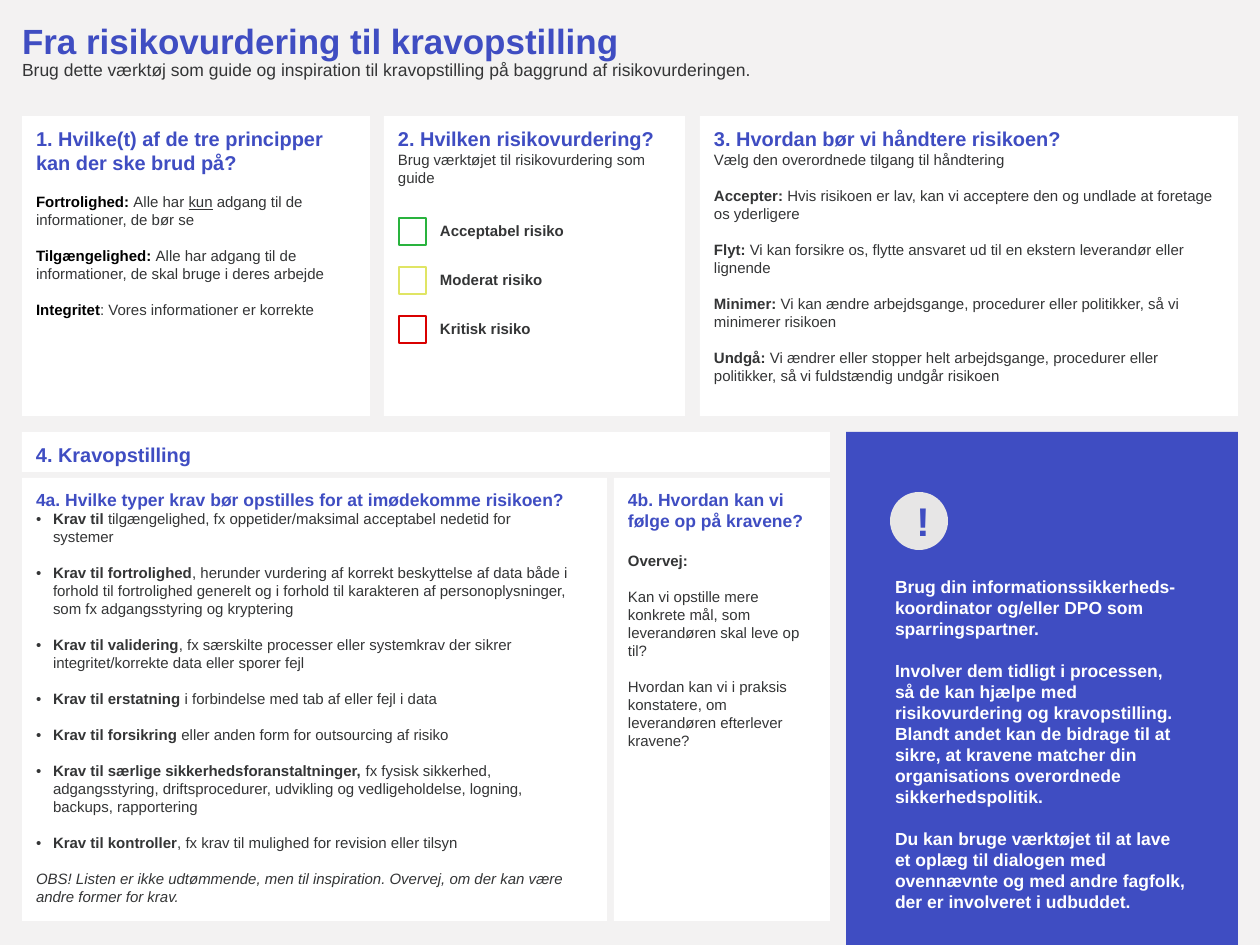
from dataclasses import dataclass
from typing import NamedTuple

from lxml import etree
from pptx import Presentation
from pptx.dml.color import RGBColor
from pptx.enum.shapes import MSO_SHAPE
from pptx.enum.text import MSO_ANCHOR, MSO_AUTO_SIZE, PP_ALIGN
from pptx.oxml.ns import qn
from pptx.util import Emu, Pt

RECT, OVAL = MSO_SHAPE.RECTANGLE, MSO_SHAPE.OVAL
TOP, MIDDLE = MSO_ANCHOR.TOP, MSO_ANCHOR.MIDDLE
LEFT, CENTER = PP_ALIGN.LEFT, PP_ALIGN.CENTER
NO_FIT = MSO_AUTO_SIZE.NONE

EMU_PER_PX = 10160
FONT = "Arial"
BLUE, TEXT, BLACK, WHITE = "3F4DC2", "343536", "000000", "FFFFFF"
PAGE, PALE = "F3F2F2", "E7E6E6"
GAP, BIG_GAP = 18, 21  # one empty line of 12 pt and of 14 pt text
HANG = 17


class Box(NamedTuple):
    x: int
    y: int
    w: int
    h: int


class Span(NamedTuple):
    text: str
    bold: bool = False
    color: str = TEXT
    italic: bool = False
    underline: bool = False


@dataclass
class Para:
    spans: list[Span]
    size: int = 12
    before: int = 0
    bullet: bool = False
    align: PP_ALIGN = LEFT
    spacing: float = 1.0


@dataclass
class Card:
    box: Box
    paras: list[Para]
    right: int = 11


class Level(NamedTuple):
    label: str
    color: str


def px(n: int) -> Emu:
    return Emu(n * EMU_PER_PX)


def rgb(color: str) -> RGBColor:
    return RGBColor.from_string(color)


def heading(text: str, size: int = 16) -> Para:
    return Para([Span(text, True, BLUE)], size)


def plain(text: str, before: int = GAP) -> Para:
    return Para([Span(text)], before=before)


def term(name: str, text: str, color: str = TEXT, before: int = GAP, bullet: bool = False) -> Para:
    """A bold lead followed by its explanation."""
    return Para([Span(name, True, color), Span(text)], before=before, bullet=bullet)


def add_run(p, text: str, *, size: int, color: str, bold=False, italic=False, underline=False) -> None:
    r = p.add_run()
    r.text = text
    f = r.font
    f.name, f.size, f.bold, f.italic, f.underline = FONT, Pt(size), bold, italic, underline
    f.color.rgb = rgb(color)


def set_bullet(p, on: bool) -> None:
    pPr = p._p.get_or_add_pPr()
    hang = px(HANG) if on else 0
    pPr.set("marL", str(hang))
    pPr.set("indent", str(-hang))
    if on:
        etree.SubElement(pPr, qn("a:buFont")).set("typeface", FONT)
        etree.SubElement(pPr, qn("a:buChar")).set("char", "•")
    else:
        etree.SubElement(pPr, qn("a:buNone"))


def write(s, paras: list[Para], insets=(0, 0, 0, 0), anchor=TOP) -> None:
    tf = s.text_frame
    tf.word_wrap, tf.auto_size, tf.vertical_anchor = True, NO_FIT, anchor
    tf.margin_left, tf.margin_top, tf.margin_right, tf.margin_bottom = map(px, insets)
    for i, para in enumerate(paras):
        p = tf.add_paragraph() if i else tf.paragraphs[0]
        set_bullet(p, para.bullet)
        p.alignment, p.line_spacing = para.align, para.spacing
        p.space_before, p.space_after = px(para.before), Pt(0)
        for span in para.spans:
            add_run(p, span.text, size=para.size, color=span.color, bold=span.bold,
                    italic=span.italic, underline=span.underline)


def place(s, box: Box) -> None:
    s.left, s.top, s.width, s.height = map(px, box)


def add_shape(slide, kind, box: Box, fill: str, line: str | None = None):
    s = slide.shapes.add_shape(kind, *map(px, box))
    s.shadow.inherit = False
    s.fill.solid()
    s.fill.fore_color.rgb = rgb(fill)
    if line:
        s.line.color.rgb = rgb(line)
        s.line.width = Pt(2.25)
    else:
        s.line.fill.background()
    return s


def add_text(slide, box: Box, paras: list[Para]) -> None:
    write(slide.shapes.add_textbox(*map(px, box)), paras)


def write_card(s, card: Card) -> None:
    write(s, card.paras, (14, 11, card.right, 18))


TITLE = [
    Para([Span("Fra risikovurdering til kravopstilling", True, BLUE)], 28, spacing=0.9),
    Para([Span("Brug dette værktøj som guide og inspiration til kravopstilling på baggrund af "
               "risikovurderingen.")], 14, spacing=0.9),
]

CARDS = [
    Card(Box(22, 116, 348, 300), [
        heading("1. Hvilke(t) af de tre principper kan der ske brud på?"),
        Para([Span("Fortrolighed: ", True, BLACK), Span("Alle har "), Span("kun", underline=True),
              Span(" adgang til de informationer, de bør se")], before=GAP),
        term("Tilgængelighed: ", "Alle har adgang til de informationer, de skal bruge i deres arbejde", BLACK),
        term("Integritet", ": Vores informationer er korrekte", BLACK),
    ]),
    Card(Box(384, 116, 301, 300), [
        heading("2. Hvilken risikovurdering?"),
        plain("Brug værktøjet til risikovurdering som guide", 0),
    ]),
    Card(Box(700, 116, 538, 300), [
        heading("3. Hvordan bør vi håndtere risikoen?"),
        plain("Vælg den overordnede tilgang til håndtering", 0),
        term("Accepter: ", "Hvis risikoen er lav, kan vi acceptere den og undlade at foretage os yderligere"),
        term("Flyt: ", "Vi kan forsikre os, flytte ansvaret ud til en ekstern leverandør eller lignende"),
        term("Minimer: ", "Vi kan ændre arbejdsgange, procedurer eller politikker, så vi minimerer risikoen"),
        term("Undgå: ", "Vi ændrer eller stopper helt arbejdsgange, procedurer eller politikker, "
                        "så vi fuldstændig undgår risikoen"),
    ], right=22),
    Card(Box(22, 432, 808, 40), [heading("4. Kravopstilling")], right=35),
    Card(Box(614, 478, 216, 443), [
        heading("4b. Hvordan kan vi følge op på kravene?", 14),
        Para([Span("Overvej:", True)], before=BIG_GAP),
        plain("Kan vi opstille mere konkrete mål, som leverandøren skal leve op til?"),
        plain("Hvordan kan vi i praksis konstatere, om leverandøren efterlever kravene?"),
    ]),
]

DEMANDS = [
    ("Krav til ", "tilgængelighed, fx oppetider/maksimal acceptabel nedetid for systemer"),
    ("Krav til fortrolighed", ", herunder vurdering af korrekt beskyttelse af data både i forhold til "
     "fortrolighed generelt og i forhold til karakteren af personoplysninger, som fx adgangsstyring "
     "og kryptering"),
    ("Krav til validering", ", fx særskilte processer eller systemkrav der sikrer integritet/korrekte "
     "data eller sporer fejl"),
    ("Krav til erstatning ", "i forbindelse med tab af eller fejl i data"),
    ("Krav til forsikring ", "eller anden form for outsourcing af risiko"),
    ("Krav til særlige sikkerhedsforanstaltninger, ", "fx fysisk sikkerhed, adgangsstyring, "
     "driftsprocedurer, udvikling og vedligeholdelse, logning, backups, rapportering"),
    ("Krav til kontroller", ", fx krav til mulighed for revision eller tilsyn"),
]
DEMAND_CARD = Card(Box(22, 478, 585, 443), [
    heading("4a. Hvilke typer krav bør opstilles for at imødekomme risikoen?", 14),
    *(term(name, text, before=GAP if i else 0, bullet=True) for i, (name, text) in enumerate(DEMANDS)),
    Para([Span("OBS! Listen er ikke udtømmende, men til inspiration. Overvej, om der kan være "
               "andre former for krav.", italic=True)], before=GAP),
], right=35)

LEVELS = [Level("Acceptabel risiko", "29B33E"), Level("Moderat risiko", "E0E564"), Level("Kritisk risiko", "D90000")]

ADVICE = [
    "Brug din informationssikkerheds-koordinator og/eller DPO som sparringspartner.",
    "Involver dem tidligt i processen, så de kan hjælpe med risikovurdering og kravopstilling. "
    "Blandt andet kan de bidrage til at sikre, at kravene matcher din organisations overordnede "
    "sikkerhedspolitik.",
    "Du kan bruge værktøjet til at lave et oplæg til dialogen med ovennævnte og med andre fagfolk, "
    "der er involveret i udbuddet.",
]


def main() -> None:
    prs = Presentation()
    prs.slide_width, prs.slide_height = px(1260), px(945)
    slide = prs.slides.add_slide(prs.slide_layouts[1])
    slide.background.fill.solid()
    slide.background.fill.fore_color.rgb = rgb(PAGE)

    # Title and subtitle
    place(slide.shapes.title, Box(22, 24, 751, 72))
    write(slide.shapes.title, TITLE)

    # White cards, with the list of demands in the body placeholder
    for card in CARDS:
        write_card(add_shape(slide, RECT, card.box, WHITE), card)
    body = slide.placeholders[1]
    place(body, DEMAND_CARD.box)
    body.fill.solid()
    body.fill.fore_color.rgb = rgb(WHITE)
    write_card(body, DEMAND_CARD)

    # Risk levels with check boxes
    for i, level in enumerate(LEVELS):
        y = 218 + 49 * i
        add_shape(slide, RECT, Box(399, y, 27, 27), WHITE, level.color)
        add_text(slide, Box(440, y + 4, 153, 18), [Para([Span(level.label, True)])])

    # Advice panel
    add_shape(slide, RECT, Box(846, 432, 392, 513), BLUE)
    mark = add_shape(slide, OVAL, Box(890, 492, 58, 58), PALE)
    write(mark, [Para([Span("!", True, BLUE)], 32, align=CENTER)], (18, 18, 18, 18), MIDDLE)
    add_text(slide, Box(895, 576, 292, 338),
             [Para([Span(text, True, WHITE)], 14, BIG_GAP if i else 0) for i, text in enumerate(ADVICE)])

    prs.save("out.pptx")


if __name__ == "__main__":
    main()
